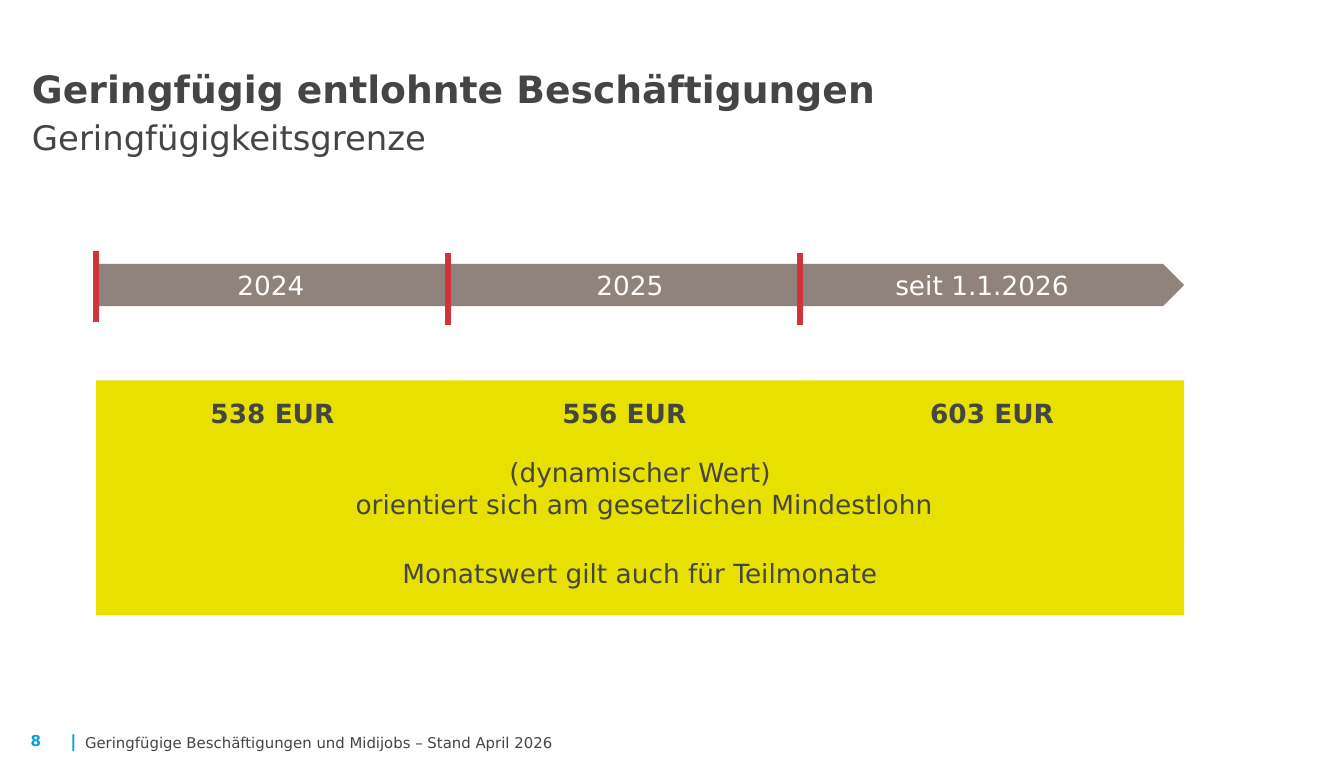
import pptx
import pptx.util
import pptx.dml.color
import pptx.enum.shapes
import pptx.enum.text
import pptx.oxml.ns
import lxml.etree

Pt = pptx.util.Pt
SHAPE = pptx.enum.shapes.MSO_SHAPE
ANCHOR = pptx.enum.text.MSO_ANCHOR
ALIGN = pptx.enum.text.PP_ALIGN

COLORS = {
    "text": "454543",
    "accent": "00A0E3",
    "timeline": "8F837B",
    "marker": "D0353B",
    "panel": "E8E100",
    "label": "FFFFFF",
}
FONT = "DejaVu Sans"
LEFT, RIGHT, PERIOD_WIDTH, OVERLAP = 51.1, 629.4, 187.1, 0.4
PERIODS = [
    (" 2024", "538 EUR", 141.8, 133.2),
    ("2025", "556 EUR", 334.8, 134.6),
    (" seit 1.1.2026", "603 EUR", 519.8, 134.6),
]


def color(name):
    return pptx.dml.color.RGBColor.from_string(COLORS[name])


def apply(target, values):
    for attribute, value in values.items():
        setattr(target, attribute, value)


def format_font(font, size, color_name, bold=False):
    apply(font, {"name": FONT, "size": Pt(size), "bold": bold})
    font.color.rgb = color(color_name)


def fill_frame(frame, lines, size, color_name, bold=False, align=ALIGN.LEFT,
               anchor=ANCHOR.MIDDLE, insets=(0, 0), wrap=True):
    side, edge = map(Pt, insets)
    apply(frame, {
        "word_wrap": wrap, "vertical_anchor": anchor,
        "margin_left": side, "margin_right": side,
        "margin_top": edge, "margin_bottom": edge,
    })
    for index, line in enumerate(lines):
        paragraph = frame.paragraphs[0] if index == 0 else frame.add_paragraph()
        paragraph.alignment = align
        run = paragraph.add_run()
        run.text = line
        format_font(run.font, size, color_name, bold)


def add_text(slide, box, line, size, color_name, **layout):
    textbox = slide.shapes.add_textbox(*map(Pt, box))
    fill_frame(textbox.text_frame, [line], size, color_name, **layout)


def add_title(slide, heading, subheading):
    title = slide.shapes.add_textbox(Pt(17), Pt(32.5), Pt(612.7), Pt(51.1))
    fill_frame(title.text_frame, [heading], 20, "text", bold=True, anchor=ANCHOR.BOTTOM)
    paragraph = title.text_frame.paragraphs[0]
    paragraph.line_spacing = Pt(24.8)
    paragraph.add_line_break()
    run = paragraph.add_run()
    run.text = subheading
    format_font(run.font, 18, "text")


def add_area(slide, preset, box, color_name):
    area = slide.shapes.add_shape(preset, *map(Pt, box))
    area.shadow.inherit = False
    area.fill.solid()
    area.fill.fore_color.rgb = color(color_name)
    area.line.fill.background()
    return area


def add_panel(slide, box, lines, bold=False):
    panel = add_area(slide, SHAPE.RECTANGLE, box, "panel")
    fill_frame(panel.text_frame, lines, 14, "text", bold=bold,
               align=ALIGN.CENTER, insets=(0.7, 0.7))


def add_marker(slide, x, top):
    marker = slide.shapes.add_connector(
        pptx.enum.shapes.MSO_CONNECTOR.STRAIGHT, Pt(x), Pt(top), Pt(x), Pt(top + 38.2))
    marker.line.color.rgb = color("marker")
    marker.line.width = Pt(3)
    properties = marker._element.spPr
    lxml.etree.SubElement(properties, pptx.oxml.ns.qn("a:effectLst"))


def add_periods(slide):
    add_area(slide, SHAPE.PENTAGON, (LEFT, 140.3, RIGHT - LEFT, 22.4), "timeline")
    for index, (period, limit, center, marker_top) in enumerate(PERIODS):
        start = LEFT + index * PERIOD_WIDTH
        end = RIGHT if index == len(PERIODS) - 1 else start + PERIOD_WIDTH + OVERLAP
        add_marker(slide, start, marker_top)
        add_text(slide, (center - 70, 142.6, 140, 17.3), period, 14, "label",
                 align=ALIGN.CENTER, insets=(5.8, 2.9))
        add_panel(slide, (start, 202.2, end - start, 34.6), [limit], bold=True)


def add_footer(slide):
    add_text(slide, (9.2, 385.5, 20.2, 17.3), "8", 8, "accent", bold=True,
             anchor=ANCHOR.TOP, insets=(7.2, 3.6), wrap=False)
    add_text(slide, (37.4, 388.4, 4.3, 10.8), "|", 8.9, "accent", bold=True,
             anchor=ANCHOR.BOTTOM, wrap=False)
    add_text(slide, (45.2, 388.4, 652.3, 10.8),
             "Geringfügige Beschäftigungen und Midijobs – Stand April 2026",
             7.9, "text", anchor=ANCHOR.BOTTOM)


def main():
    presentation = pptx.Presentation()
    apply(presentation, {"slide_width": Pt(714.35), "slide_height": Pt(405)})
    slide = presentation.slides.add_slide(presentation.slide_layouts[6])
    add_title(slide, "Geringfügig entlohnte Beschäftigungen", "Geringfügigkeitsgrenze")
    add_periods(slide)
    add_panel(slide, (LEFT, 236.4, RIGHT - LEFT, 46.1),
              ["(dynamischer Wert)", " orientiert sich am gesetzlichen Mindestlohn"])
    add_panel(slide, (LEFT, 281.8, RIGHT - LEFT, 45.3),
              ["Monatswert gilt auch für Teilmonate"])
    add_footer(slide)
    presentation.save("out.pptx")


if __name__ == "__main__":
    main()
